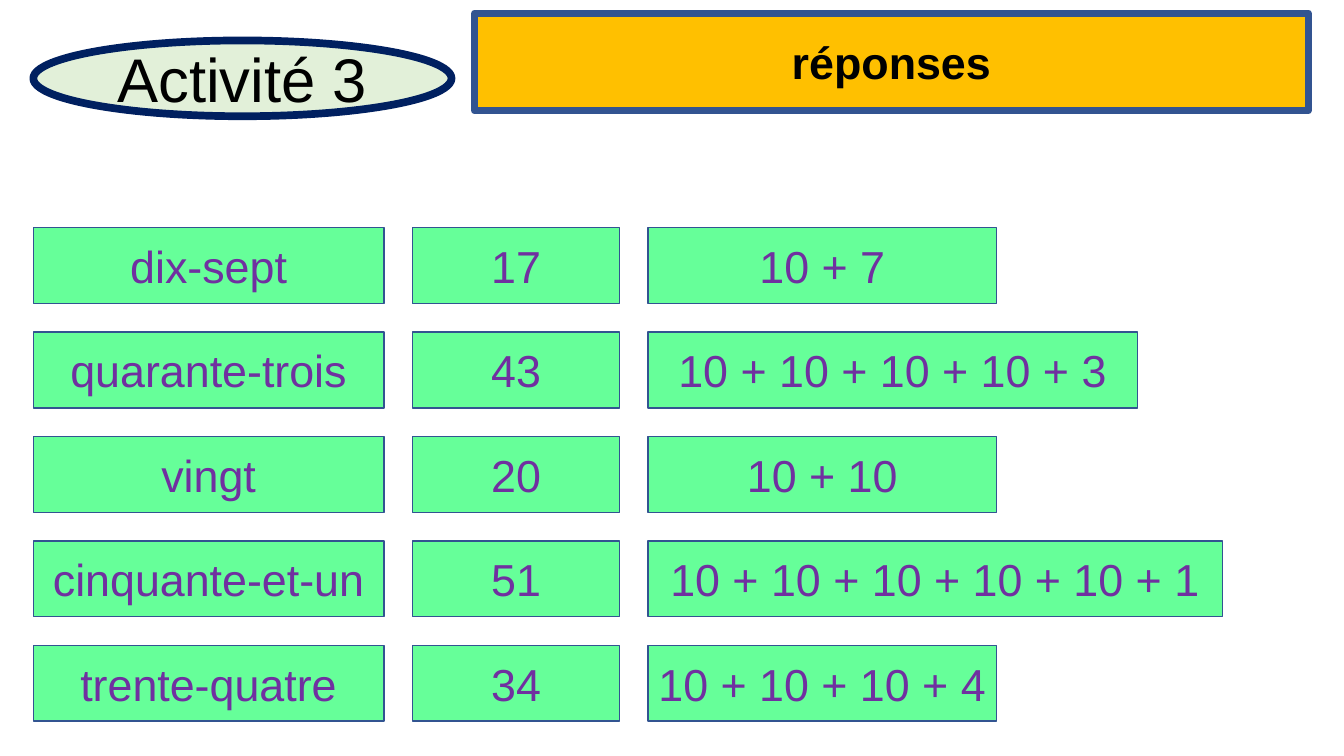
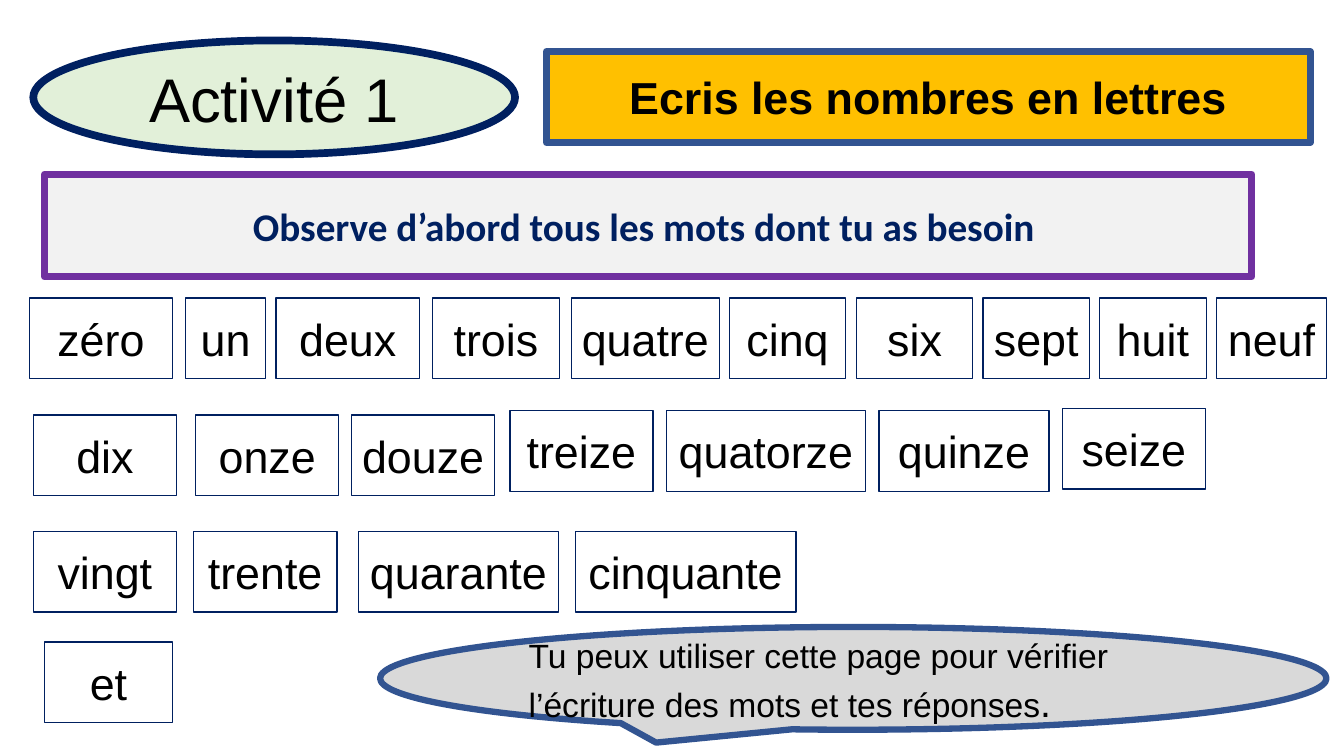
from pptx import Presentation
from pptx.dml.color import RGBColor
from pptx.enum.shapes import MSO_SHAPE as Shape
from pptx.enum.text import MSO_ANCHOR as Anchor, MSO_AUTO_SIZE as AutoSize, PP_ALIGN as Align
from pptx.util import Cm, Pt

COLOURS = {
    "black": "000000", "white": "FFFFFF", "navy": "002060", "blue": "325491",
    "purple": "7030A0", "mint": "66FF99", "pale green": "E2F0D9",
    "amber": "FFC000", "light grey": "F2F2F2", "grey": "D9D9D9",
}

# Each style: fill, line, line width, text colour, font values
STYLES = {
    "badge": ("pale green", "navy", 5.5, "black", {"name": "Arial", "size": Pt(44), "bold": False}),
    "title": ("amber", "blue", 5, "black", {"name": "Arial", "size": Pt(32), "bold": True}),
    "answer": ("mint", "blue", 1, "purple", {"name": "Arial", "size": Pt(32), "bold": False}),
    "word": ("white", "navy", 1, "black", {"name": "Arial", "size": Pt(32), "bold": False}),
    "instruction": ("light grey", "purple", 5, "navy", {"name": "Calibri", "size": Pt(28), "bold": True}),
    "hint": ("grey", "blue", 4.5, "black", {"name": "Arial", "size": Pt(24), "bold": False}),
}


def dress(box, style, text):
    """Format a box and write its text; return the paragraph."""
    fill, line, width, ink, font = STYLES[style]
    box.fill.solid()
    box.fill.fore_color.rgb = RGBColor.from_string(COLOURS[fill])
    box.line.color.rgb = RGBColor.from_string(COLOURS[line])
    box.line.width = Pt(width)
    frame = box.text_frame
    for name, value in {"word_wrap": True, "auto_size": AutoSize.NONE,
                        "vertical_anchor": Anchor.MIDDLE}.items():
        setattr(frame, name, value)
    if style in ("answer", "word"):
        frame.margin_left = frame.margin_right = 0
    para = frame.paragraphs[0]
    para.alignment = Align.CENTER
    span = para.add_run()
    span.text = text
    for name, value in font.items():
        setattr(span.font, name, value)
    span.font.color.rgb = RGBColor.from_string(COLOURS[ink])
    return para


def add_box(page, style, text, place, kind=Shape.RECTANGLE):
    """Add a shape at place (left, top, width, height in cm)."""
    box = page.shapes.add_shape(kind, *map(Cm, place))
    box.shadow.inherit = False
    return dress(box, style, text)


deck = Presentation()
deck.slide_width, deck.slide_height = Cm(33.87), Cm(19.05)

# Shared header: activity badge and title banner
HEADERS = [
    ("Activité 3", (0.84, 1.02, 10.54, 1.91), "réponses", (11.96, 0.33, 21.01, 2.46)),
    ("Activité 1", (0.84, 1.02, 12.14, 2.87), "Ecris les nombres en lettres", (13.77, 1.3, 19.25, 2.29)),
]
pages = []
for activity, badge_place, heading, title_place in HEADERS:
    page = deck.slides.add_slide(deck.slide_layouts[5])
    title = page.shapes.title
    for name, value in zip(("left", "top", "width", "height"), title_place):
        setattr(title, name, Cm(value))
    dress(title, "title", heading)
    add_box(page, "badge", activity, badge_place, Shape.OVAL)
    pages.append(page)
answers_page, words_page = pages

# Answers: word, number and sum on each row
ANSWERS = [
    ("dix-sept", "17", "10 + 7", 8.79),
    ("quarante-trois", "43", "10 + 10 + 10 + 10 + 3", 12.34),
    ("vingt", "20", "10 + 10", 8.79),
    ("cinquante-et-un", "51", "10 + 10 + 10 + 10 + 10 + 1", 14.48),
    ("trente-quatre", "34", "10 + 10 + 10 + 4", 8.79),
]
for row, (word, number, total, total_width) in enumerate(ANSWERS):
    top = 5.74 + 2.63 * row
    for text, left, width in ((word, 0.84, 8.84), (number, 10.39, 5.23),
                              (total, 16.33, total_width)):
        add_box(answers_page, "answer", text, (left, top, width, 1.91))

# Instruction
add_box(words_page, "instruction", "Observe d’abord tous les mots dont tu as besoin ",
        (1.12, 4.39, 30.43, 2.59))

# Word cards, grouped by top: word, left, width
WORDS = {
    7.51: [("zéro", 0.74, 3.61), ("un", 4.67, 2.03), ("deux", 6.96, 3.61),
           ("trois", 10.9, 3.2), ("quatre", 14.4, 3.73), ("cinq", 18.39, 2.92),
           ("six", 21.59, 2.92), ("sept", 24.77, 2.69), ("huit", 27.71, 2.69),
           ("neuf", 30.66, 2.77)],
    10.46: [("dix", 0.84, 3.61), ("onze", 4.93, 3.61), ("douze", 8.86, 3.61)],
    10.35: [("treize", 12.85, 3.61), ("quatorze", 16.79, 5.03), ("quinze", 22.15, 4.29)],
    10.29: [("seize", 26.77, 3.61)],
    13.39: [("vingt", 0.84, 3.61), ("trente", 4.88, 3.61), ("quarante", 9.04, 5.03),
            ("cinquante", 14.5, 5.56)],
    16.18: [("et", 1.12, 3.23)],
}
for top, cards in WORDS.items():
    for word, left, width in cards:
        add_box(words_page, "word", word, (left, top, width, 2.03))

# Hint bubble, with a larger full stop
para = add_box(words_page, "hint",
               "Tu peux utiliser cette page pour vérifier l’écriture des mots et tes réponses",
               (9.58, 15.8, 23.85, 2.59), Shape.OVAL_CALLOUT)
para.alignment = Align.LEFT
para.line_spacing = 1.07
span = para.add_run()
span.text = "."
for name, value in {"name": "Arial", "size": Pt(28)}.items():
    setattr(span.font, name, value)
span.font.color.rgb = RGBColor.from_string(COLOURS["black"])

deck.save("out.pptx")
